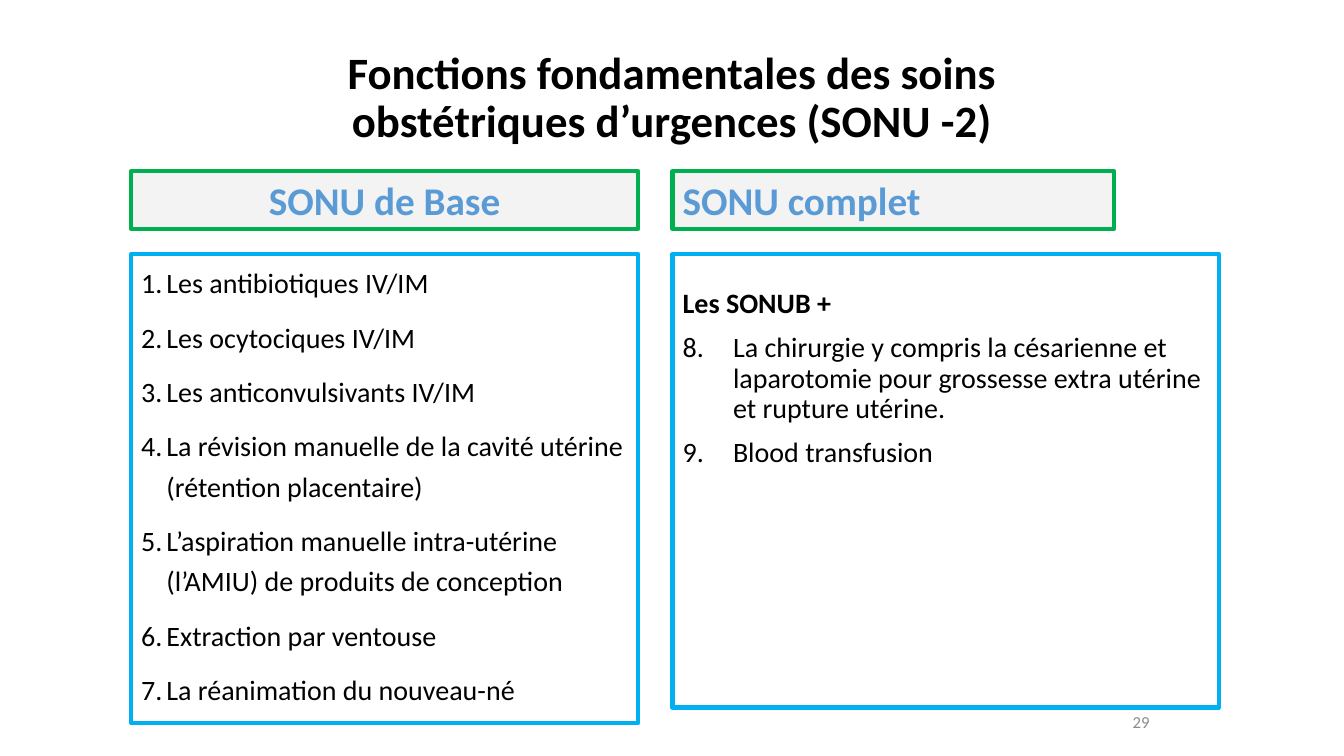
from lxml.etree import SubElement as Sub
from pptx import Presentation
from pptx.dml.color import RGBColor as Rgb
from pptx.enum.text import MSO_ANCHOR as Anchor, MSO_AUTO_SIZE as Auto, PP_ALIGN as Align
from pptx.oxml.ns import qn
from pptx.util import Pt

PX = 9144  # EMU per px, 100 px to the inch

COLORS = {
    "ink": "000000",
    "white": "FFFFFF",
    "head": "5B9BD5",
    "gray": "E7E6E6",
    "green": "00B050",
    "blue": "00B0F0",
    "page": "8C8C8C",
}

BASE = [
    "Les antibiotiques IV/IM",
    "Les ocytociques IV/IM",
    "Les anticonvulsivants IV/IM",
    "La révision manuelle de la cavité utérine (rétention placentaire)",
    "L’aspiration manuelle intra-utérine (l’AMIU) de produits de conception",
    "Extraction par ventouse",
    "La réanimation du nouveau-né",
]
FULL = [
    "La chirurgie y compris la césarienne et laparotomie pour grossesse "
    "extra utérine et rupture utérine.",
    "Blood transfusion",
]


def color(name):
    return Rgb.from_string(COLORS[name])


def write(frame, text, size=20, tint="ink", bold=False, align=Align.LEFT,
          lead=1.0, before=0, hang=0, start=None):
    """Fill the first empty paragraph, or add one, and format it."""
    para = frame.paragraphs[-1]
    if para.runs:
        para = frame.add_paragraph()
    para.alignment, para.line_spacing = align, lead
    para.space_before, para.space_after = Pt(before), Pt(0)
    run = para.add_run()
    run.text = text
    font = run.font
    font.name, font.size, font.bold = "Calibri", Pt(size), bold
    font.color.rgb = color(tint)
    # Numbering and hanging indent
    props = para._p.get_or_add_pPr()
    props.set("marL", str(hang * PX))
    props.set("indent", str(-hang * PX))
    if start is None:
        Sub(props, qn("a:buNone"))
    else:
        Sub(props, qn("a:buFont"), typeface="Calibri")
        Sub(props, qn("a:buAutoNum"), type="arabicPeriod", startAt=str(start))


class Deck:
    def __init__(self):
        self.prs = Presentation()
        self.prs.slide_width, self.prs.slide_height = 1333 * PX, 750 * PX
        # Comparison layout: title, two headings, two lists
        self.slide = self.prs.slides.add_slide(self.prs.slide_layouts[4])
        self.slots = {s.placeholder_format.idx: s for s in self.slide.placeholders}

    def frame(self, shape, anchor, top=5):
        frame = shape.text_frame
        frame.word_wrap, frame.auto_size = True, Auto.NONE
        frame.vertical_anchor = anchor
        frame.margin_left = frame.margin_right = 10 * PX
        frame.margin_top, frame.margin_bottom = top * PX, 5 * PX
        return frame

    def slot(self, idx, x, y, w, h, anchor=Anchor.TOP, top=5):
        shape = self.slots[idx]
        shape.left, shape.top = x * PX, y * PX
        shape.width, shape.height = w * PX, h * PX
        return shape, self.frame(shape, anchor, top)

    def paint(self, shape, fill, line, alpha=100):
        shape.fill.solid()
        shape.fill.fore_color.rgb = color(fill)
        if alpha < 100:
            tone = shape._element.spPr.find(qn("a:solidFill"))[0]
            Sub(tone, qn("a:alpha"), val=str(alpha * 1000))
        shape.line.color.rgb = color(line)
        shape.line.width = Pt(3)

    def title(self, text, *box):
        _, frame = self.slot(0, *box, anchor=Anchor.MIDDLE)
        write(frame, text, size=32, bold=True, align=Align.CENTER, lead=0.9)

    def head(self, idx, text, *box, align, alpha):
        shape, frame = self.slot(idx, *box)
        self.paint(shape, "gray", "green", alpha)
        write(frame, text, size=28, tint="head", bold=True, align=align)

    def list(self, idx, items, *box, start, hang, lead, lede=None, top=5):
        shape, frame = self.slot(idx, *box, top=top)
        self.paint(shape, "white", "blue")
        if lede:
            write(frame, lede, bold=True, lead=lead)
        for i, item in enumerate(items):
            write(frame, item, lead=lead, before=10 if i or lede else 0,
                  hang=hang, start=start)

    def page(self, text, x, y, w, h):
        box = self.slide.shapes.add_textbox(x * PX, y * PX, w * PX, h * PX)
        frame = self.frame(box, Anchor.MIDDLE)
        write(frame, text, size=12, tint="page", align=Align.RIGHT)


def main():
    deck = Deck()
    left, right, wide = 130, 667, 503

    # Title
    deck.title("Fonctions fondamentales des soins obstétriques d’urgences (SONU -2)",
               283, 51, 767, 94)

    # Basic care column
    deck.head(1, "SONU de Base", left, 170, wide, 57, align=Align.CENTER, alpha=48)
    deck.list(2, BASE, left, 252, wide, 465, start=1, hang=25, lead=1.2)

    # Full care column
    deck.head(3, "SONU complet", right, 170, 438, 57, align=Align.LEFT, alpha=45)
    deck.list(4, FULL, right, 252, 542, 450, start=8, hang=50, lead=0.9,
              lede="Les SONUB +", top=35)

    # Page number
    deck.page("29", 917, 696, 233, 40)
    deck.prs.save("out.pptx")


if __name__ == "__main__":
    main()
